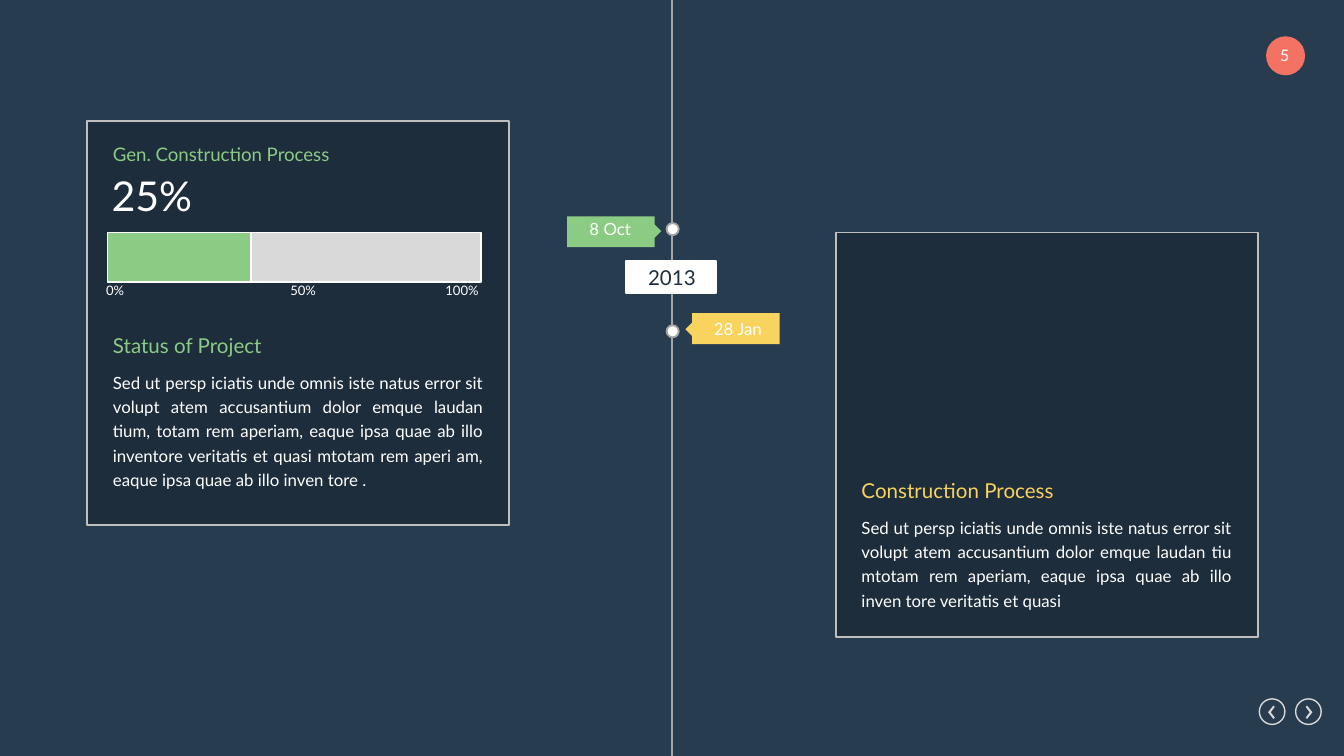
from lxml import etree
from pptx import Presentation
from pptx.dml.color import RGBColor
from pptx.enum import shapes, text
from pptx.oxml.ns import qn
from pptx.util import Inches, Pt

NAVY, PANEL, WHITE = "283C50", "1E2D3C", "FFFFFF"
GREEN, YELLOW, CORAL = "8CCB84", "F8D35E", "F47264"
LIGHT, BORDER, AXIS = "D9D9D9", "BFBFBF", "A6A6A6"
SHAPE, ALIGN = shapes.MSO_SHAPE, text.PP_ALIGN
AXIS_X = 5
LEFT_BODY = (
    "Sed ut persp iciatis unde omnis iste natus error sit volupt atem "
    "accusantium dolor emque laudan tium, totam rem aperiam, eaque ipsa quae "
    "ab illo inventore veritatis et quasi mtotam rem aperi am, eaque ipsa "
    "quae ab illo inven tore .")
RIGHT_BODY = (
    "Sed ut persp iciatis unde omnis iste natus error sit volupt atem "
    "accusantium dolor emque laudan tiu mtotam rem aperiam, eaque ipsa quae "
    "ab illo inven tore veritatis et quasi")


def rgb(color):
    return RGBColor.from_string(color)


def paint(shape, fill=None, line=None, width=1):
    shape.shadow.inherit = False
    if fill:
        shape.fill.solid()
        shape.fill.fore_color.rgb = rgb(fill)
    else:
        shape.fill.background()
    if line:
        shape.line.color.rgb = rgb(line)
        shape.line.width = Pt(width)
    else:
        shape.line.fill.background()


def add_box(slide, kind, box, rotation=0, **style):
    shape = slide.shapes.add_shape(kind, *map(Inches, box))
    shape.rotation = rotation
    paint(shape, **style)
    return shape


def add_words(slide, words, box, size=9, color=WHITE, align=ALIGN.LEFT,
              spacing=None):
    frame = slide.shapes.add_textbox(*map(Inches, box)).text_frame
    frame.word_wrap = True
    frame.margin_left = frame.margin_right = 0
    frame.margin_top = frame.margin_bottom = 0
    paragraph = frame.paragraphs[0]
    paragraph.alignment = align
    if spacing:
        paragraph.line_spacing = Pt(spacing)
    run = paragraph.add_run()
    run.text = words
    run.font.name = "Lato"
    run.font.size = Pt(size)
    run.font.color.rgb = rgb(color)


def add_axis_part(slide, top, bottom):
    line = slide.shapes.add_connector(
        shapes.MSO_CONNECTOR.STRAIGHT, Inches(AXIS_X), Inches(top),
        Inches(AXIS_X), Inches(bottom))
    line.line.color.rgb = rgb(AXIS)
    line.line.width = Pt(1.5)
    etree.SubElement(line._element.spPr, qn("a:effectLst"))


def add_nav_button(slide, left, direction):
    """Ringed chevron; direction is -1 for back and 1 for forward."""
    size, top = 0.19, 5.2
    add_box(slide, SHAPE.OVAL, (left, top, size, size), line=LIGHT, width=0.75)
    center_x, center_y = left + size / 2, top + 0.1
    chevron = [(-0.01, -0.05), (0.03, 0), (-0.01, 0.05),
               (-0.02, 0.04), (0.01, 0), (-0.02, -0.04)]
    points = [(Inches(center_x + direction * x), Inches(center_y + y))
              for x, y in chevron]
    outline = slide.shapes.build_freeform(*points[0])
    outline.add_line_segments(points[1:], close=True)
    paint(outline.convert_to_shape(), fill=LIGHT)


def add_panel(slide, left, top):
    add_box(slide, SHAPE.RECTANGLE, (left, top, 3.14, 3.01),
            fill=PANEL, line=BORDER)


def add_article(slide, left, top, heading, body, color, body_height):
    add_words(slide, heading, (left, top, 2.75, 0.19), size=11, color=color)
    add_words(slide, body, (left, top + 0.26, 2.75, body_height),
              align=ALIGN.JUSTIFY, spacing=13)


def add_date_tag(slide, left, top, pointer, words_at, words, color, turn):
    tag = add_box(slide, SHAPE.ROUNDED_RECTANGLE, (left, top, 0.65, 0.23),
                  rotation=turn - 90, fill=color)
    tag.adjustments[0] = 0
    add_box(slide, SHAPE.ISOSCELES_TRIANGLE, (*pointer, 0.12, 0.06),
            rotation=turn, fill=color)
    add_words(slide, words, (*words_at, 0.44, 0.15), align=ALIGN.CENTER)


def add_progress(slide):
    top, height = 1.73, 0.37
    add_box(slide, SHAPE.RECTANGLE, (1.01, top, 2.57, height),
            fill=LIGHT, line=WHITE)
    add_box(slide, SHAPE.RECTANGLE, (0.8, top, 1.07, height),
            fill=GREEN, line=WHITE)
    add_words(slide, "25%", (0.83, 1.27, 1.01, 0.39), size=22)
    add_words(slide, "Gen. Construction Process", (0.84, 1.06, 1.66, 0.17),
              size=10, color=GREEN)
    for left, label, align in ((0.79, "0%", ALIGN.LEFT),
                               (2.08, "50%", ALIGN.CENTER),
                               (3.21, "100%", ALIGN.RIGHT)):
        add_words(slide, label, (left, top + height, 0.35, 0.14),
                  size=7, align=align)


def main():
    deck = Presentation()
    # Widescreen, 16:9
    deck.slide_width, deck.slide_height = Inches(10), Inches(10 * 9 / 16)
    slide = deck.slides.add_slide(deck.slide_layouts[6])
    slide.background.fill.solid()
    slide.background.fill.fore_color.rgb = rgb(NAVY)

    # Navigation and page number
    add_nav_button(slide, 9.37, -1)
    add_nav_button(slide, 9.64, 1)
    add_box(slide, SHAPE.OVAL, (9.42, 0.27, 0.29, 0.29), fill=CORAL)
    add_words(slide, "5", (9.44, 0.34, 0.24, 0.14), size=8.5,
              align=ALIGN.CENTER)

    # Panels
    add_panel(slide, 6.22, 1.73)
    add_panel(slide, 0.65, 0.9)
    add_article(slide, 6.41, 3.56, "Construction Process", RIGHT_BODY,
                YELLOW, 0.71)
    add_progress(slide)
    add_article(slide, 0.84, 2.48, "Status of Project", LEFT_BODY,
                GREEN, 0.89)

    # Timeline
    for top, bottom in ((0, 1.66), (1.74, 2.42), (2.51, 5.63)):
        add_axis_part(slide, top, bottom)
    for top in (1.66, 2.42):
        add_box(slide, SHAPE.OVAL, (AXIS_X - 0.04, top, 0.09, 0.09),
                fill=WHITE, line=AXIS)
    add_date_tag(slide, 4.22, 1.61, (4.83, 1.69), (4.32, 1.63),
                 "8 Oct", GREEN, 90)
    add_date_tag(slide, 5.15, 2.33, (5.07, 2.42), (5.27, 2.37),
                 "28 Jan", YELLOW, 270)

    # Year
    add_box(slide, SHAPE.RECTANGLE, (4.66, 1.94, 0.67, 0.24),
            fill=WHITE, line=WHITE)
    add_words(slide, "2013", (4.81, 1.97, 0.38, 0.19), size=11, color=PANEL,
              align=ALIGN.CENTER)

    deck.save("out.pptx")


if __name__ == "__main__":
    main()
